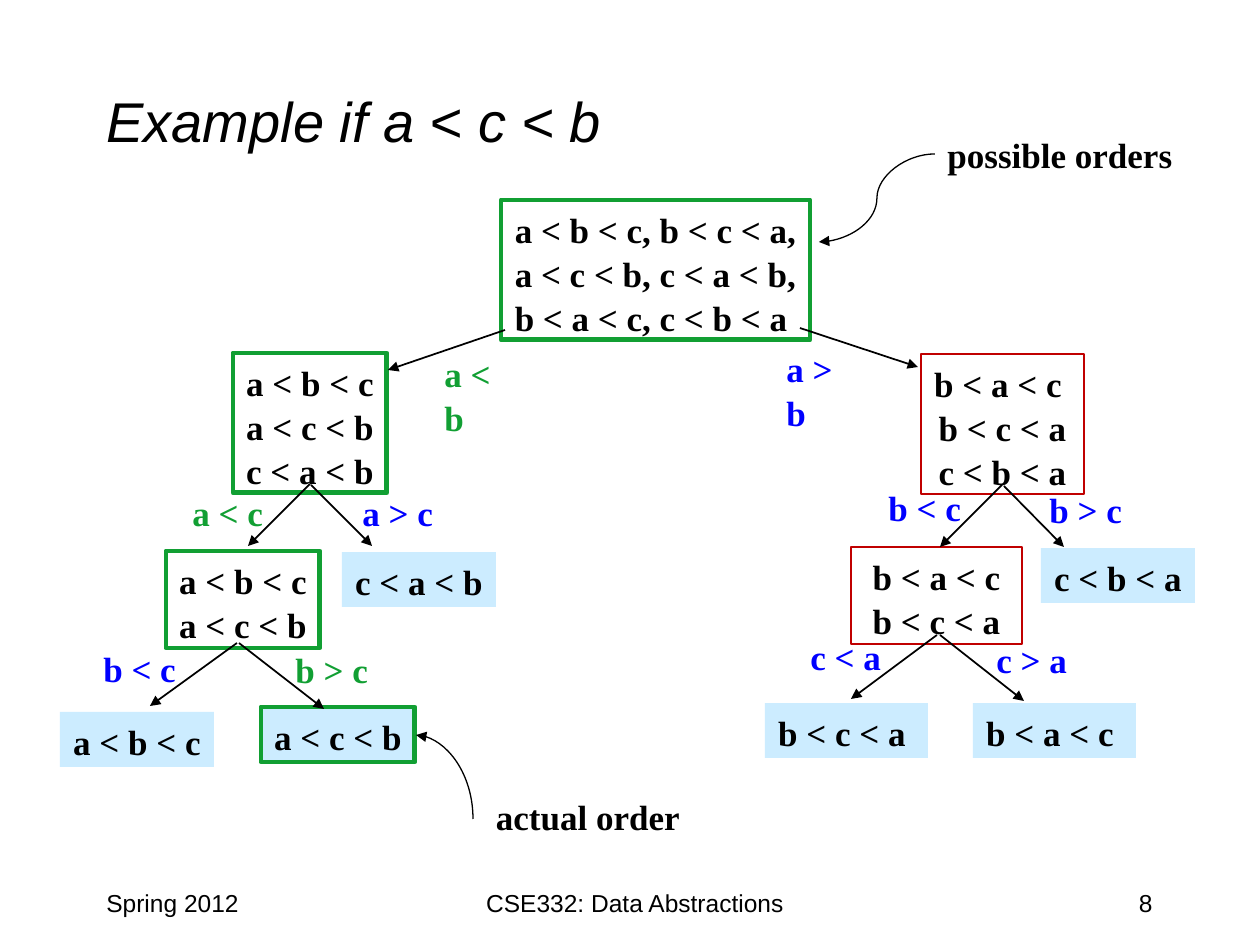
import pptx
import pptx.util
import pptx.dml.color
import pptx.enum.shapes
import pptx.enum.text
import pptx.oxml
from pptx.oxml import ns

SCALE = 914400 / 126
COLORS = {"ink": "000000", "paper": "FFFFFF", "green": "119F33",
          "blue": "0000FF", "red": "C00000", "leaf": "CCECFF"}
SANS, SERIF = "Arial", "Times New Roman"
ALIGN = pptx.enum.text.PP_ALIGN
ANCHOR = pptx.enum.text.MSO_ANCHOR
LINK = pptx.enum.shapes.MSO_CONNECTOR

# left, top, width, height, fill, edge, orders
NODES = [
    (501, 200, 309, 140, "paper", "green",
     ["a < b < c, b < c < a,", "a < c < b, c < a < b,", "b < a < c, c < b < a "]),
    (233, 353, 154, 140, "paper", "green", ["a < b < c", "a < c < b", "c < a < b"]),
    (921, 354, 163, 140, "paper", "red", ["b < a < c ", "b < c < a", "c < b < a"]),
    (166, 551, 154, 97, "paper", "green", ["a < b < c", "a < c < b"]),
    (342, 552, 154, 55, "leaf", None, ["c < a < b"]),
    (60, 712, 154, 55, "leaf", None, ["a < b < c"]),
    (261, 707, 154, 55, "leaf", "green", ["a < c < b"]),
    (851, 547, 171, 97, "paper", "red", [" b < a < c ", "b < c < a"]),
    (1041, 548, 154, 55, "leaf", None, ["c < b < a"]),
    (765, 703, 163, 55, "leaf", None, ["b < c < a "]),
    (973, 703, 163, 55, "leaf", None, ["b < a < c "]),
]
EDGE = {"green": 2.75, "red": 1}

# arrow start, arrow end, label place, label, colour
STEPS = [
    (505, 330, 388, 370, 432, 344, "a < b", "green"),
    (800, 328, 918, 367, 774, 339, "a > b", "blue"),
    (310, 484, 248, 546, 180, 483, "a < c", "green"),
    (311, 485, 372, 546, 350, 483, "a > c", "blue"),
    (237, 643, 150, 706, 91, 639, "b < c", "blue"),
    (239, 643, 324, 709, 283, 640, "b > c", "green"),
    (1002, 485, 940, 547, 876, 478, "b < c", "blue"),
    (1004, 486, 1064, 547, 1037, 480, "b > c", "blue"),
    (937, 635, 851, 699, 798, 627, "c < a", "blue"),
    (940, 635, 1024, 701, 984, 630, "c > a", "blue"),
]


def px(*sizes):
    return [pptx.util.Emu(round(size * SCALE)) for size in sizes]


def color(name):
    return pptx.dml.color.RGBColor.from_string(COLORS[name])


def write(shape, lines, size, face, ink="ink", align=ALIGN.LEFT,
          anchor=ANCHOR.TOP, wrap=False, bold=False, italic=False):
    frame = shape.text_frame
    frame.text = "\n".join(lines)
    frame.word_wrap = wrap
    frame.vertical_anchor = anchor
    for para in frame.paragraphs:
        para.alignment = align
        if face == SERIF:
            para.line_spacing = 1.05
        font = para.font
        font.name, font.size = face, pptx.util.Pt(size)
        font.bold, font.italic = bold, italic
        font.color.rgb = color(ink)


def text(slide, box, words, size, face, **style):
    write(slide.shapes.add_textbox(*px(*box)), [words], size, face, **style)


def node(slide, left, top, width, height, fill, edge, orders):
    kind = pptx.enum.shapes.MSO_SHAPE.RECTANGLE
    shape = slide.shapes.add_shape(kind, *px(left, top, width, height))
    shape.shadow.inherit = False
    shape.fill.solid()
    shape.fill.fore_color.rgb = color(fill)
    if edge:
        shape.line.color.rgb = color(edge)
        shape.line.width = pptx.util.Pt(EDGE[edge])
    else:
        shape.line.fill.background()
    write(shape, orders, 20, SERIF, align=ALIGN.CENTER, bold=True)


def arrow(slide, ends, kind=LINK.STRAIGHT, width=1, tip="tailEnd"):
    """Draw a connector; tip names the end that has the arrowhead."""
    link = slide.shapes.add_connector(kind, *px(*ends))
    link.line.color.rgb = color("ink")
    link.line.width = pptx.util.Pt(width)
    pptx.oxml.xmlchemy.OxmlElement
    head = pptx.oxml.parse_xml(
        f'<a:{tip} {ns.nsdecls("a")} type="triangle"/>')
    link.line._get_or_add_ln().append(head)
    props = link._element.spPr
    props.append(pptx.oxml.parse_xml(f'<a:effectLst {ns.nsdecls("a")}/>'))
    return link


def step(slide, x1, y1, x2, y2, left, top, words, ink):
    arrow(slide, (x1, y1, x2, y2))
    text(slide, (left, top, 99, 55), words, 20, SERIF, ink=ink, bold=True)


def note(slide, left, top, words):
    text(slide, (left, top, 252, 55), words, 20, SERIF, align=ALIGN.CENTER,
         anchor=ANCHOR.MIDDLE, wrap=True, bold=True)


def main():
    deck = pptx.Presentation()
    deck.slide_width, deck.slide_height = px(1260, 945)
    slide = deck.slides.add_slide(deck.slide_layouts[6])

    text(slide, (94, 42, 1071, 157), "Example if a < c < b", 32, SANS,
         anchor=ANCHOR.MIDDLE, wrap=True, italic=True)
    for left, width, words, align in [
            (94, 262, "Spring 2012", ALIGN.LEFT),
            (399, 472, "CSE332: Data Abstractions", ALIGN.CENTER),
            (903, 262, "8", ALIGN.RIGHT)]:
        text(slide, (left, 882, width, 63), words, 14, SANS,
             align=align, wrap=True)

    for row in NODES:
        node(slide, *row)
    for row in STEPS:
        step(slide, *row)

    note(slide, 934, 126, "possible orders")
    arrow(slide, (935, 154, 819, 242), LINK.CURVE, 0.75)
    note(slide, 462, 788, "actual order")
    bend = arrow(slide, (416, 735, 473, 819), LINK.CURVE, 0.75, "headEnd")
    bend._element.spPr.prstGeom.set("prst", "curvedConnector2")

    deck.save("out.pptx")


if __name__ == "__main__":
    main()
